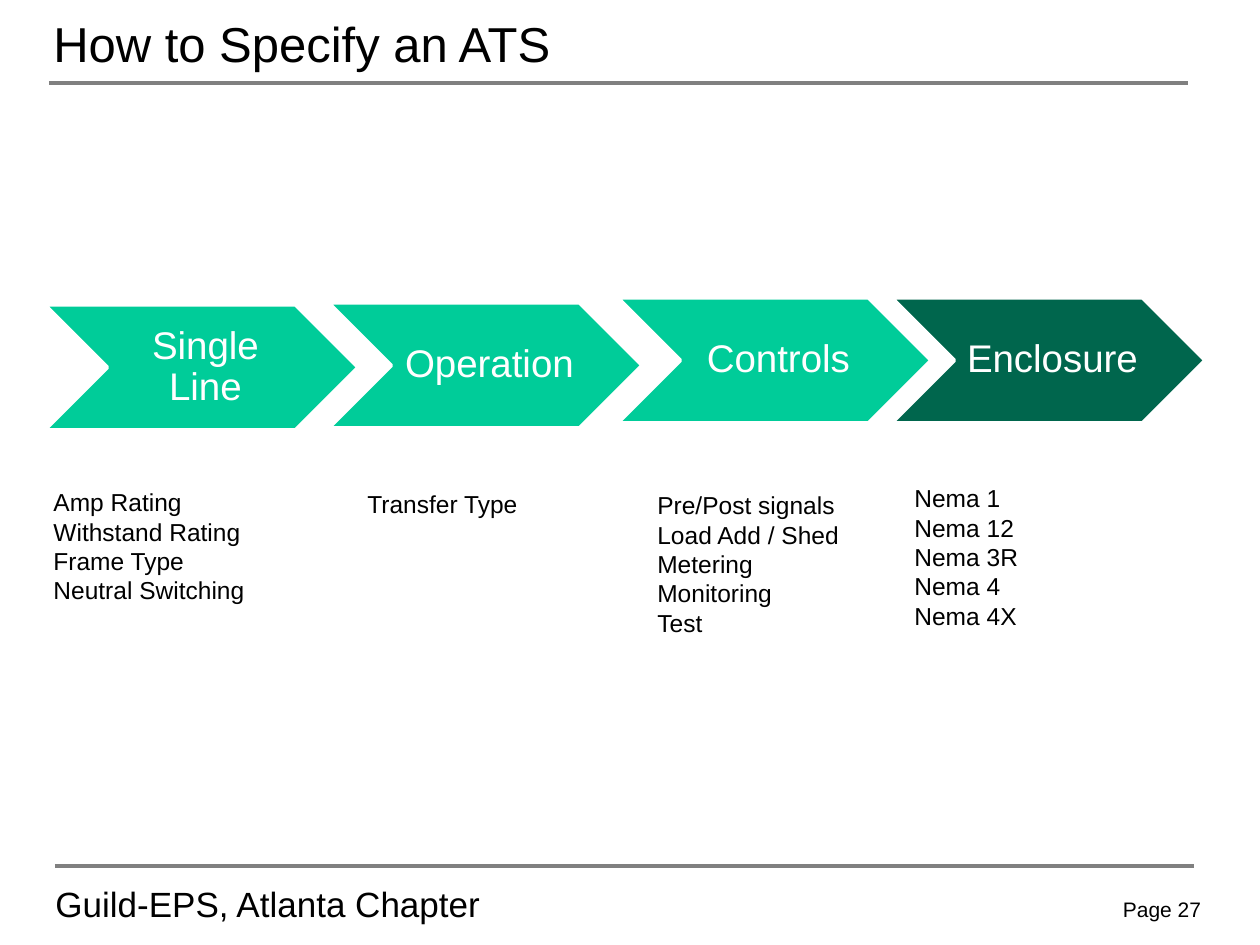
from lxml.etree import SubElement
from pptx import Presentation
from pptx.dml.color import RGBColor
from pptx.enum.shapes import MSO_CONNECTOR, MSO_SHAPE
from pptx.enum.text import MSO_ANCHOR, PP_ALIGN
from pptx.oxml.ns import qn
from pptx.util import Pt

HUE = {"text": "000000", "rule": "808080", "step": "00CC99",
       "last": "00664D", "white": "FFFFFF"}
FONT = "Arial"
RULES = [(49, 83), (55, 866)]
RULE_W = 1139
STEP_W, STEP_H = 313, 125
STEPS = [
    ("Single Line", "step", (45, 305)),
    ("Operation", "step", (329, 303)),
    ("Controls", "step", (618, 298)),
    ("Enclosure", "last", (892, 298)),
]
LISTS = [
    ((41, 481, 285, 284),
     ["Amp Rating", "Withstand Rating", "Frame Type", "Neutral Switching"]),
    ((355, 483, 228, 74), ["Transfer Type"]),
    ((645, 484, 278, 161),
     ["Pre/Post signals", "Load Add / Shed", "Metering", "Monitoring", "Test"]),
    ((902, 477, 228, 190),
     ["Nema 1", "Nema 12", "Nema 3R", "Nema 4", "Nema 4X"]),
]
LABELS = [
    ((41, 6, 1071, 73), "How to Specify an ATS", 28, MSO_ANCHOR.MIDDLE, PP_ALIGN.LEFT),
    ((43, 876, 480, 55), "Guild-EPS, Atlanta Chapter", 20, MSO_ANCHOR.TOP, PP_ALIGN.LEFT),
    ((1087, 878, 150, 63), "Page 27", 12, MSO_ANCHOR.MIDDLE, PP_ALIGN.CENTER),
]


def px(n):
    return round(n * 914400 / 126)


def tint(key):
    return RGBColor.from_string(HUE[key])


def write(shape, lines, size, hue="text", anchor=MSO_ANCHOR.TOP,
          align=PP_ALIGN.LEFT, wrap=True):
    frame = shape.text_frame
    frame.word_wrap = wrap
    frame.vertical_anchor = anchor
    for i, line in enumerate(lines):
        para = frame.add_paragraph() if i else frame.paragraphs[0]
        para.alignment = align
        run = para.add_run()
        run.text = line
        run.font.name = FONT
        run.font.size = Pt(size)
        run.font.color.rgb = tint(hue)
    return frame


deck = Presentation()
deck.slide_width, deck.slide_height = px(1260), px(945)
slide = deck.slides.add_slide(deck.slide_layouts[6])
shapes = slide.shapes

for x, y in RULES:
    rule = shapes.add_connector(MSO_CONNECTOR.STRAIGHT, px(x), px(y), px(x + RULE_W), px(y))
    rule.line.color.rgb = tint("rule")
    rule.line.width = Pt(2)
    SubElement(rule._element.spPr, qn("a:effectLst"))

for box, text, size, anchor, align in LABELS:
    write(shapes.add_textbox(*map(px, box)), [text], size,
          anchor=anchor, align=align)

for name, hue, (x, y) in STEPS:
    step = shapes.add_shape(MSO_SHAPE.CHEVRON, px(x), px(y), px(STEP_W), px(STEP_H))
    step.shadow.inherit = False
    step.fill.solid()
    step.fill.fore_color.rgb = tint(hue)
    step.line.color.rgb = tint("white")
    step.line.width = Pt(2)
    frame = write(step, [name], 22, "white", MSO_ANCHOR.MIDDLE, PP_ALIGN.CENTER)
    frame.margin_left = px(12)
    frame.margin_top = frame.margin_right = frame.margin_bottom = px(4)
    frame.paragraphs[0].line_spacing = 0.9

for box, lines in LISTS:
    write(shapes.add_textbox(*map(px, box)), lines, 14)

deck.save("out.pptx")
